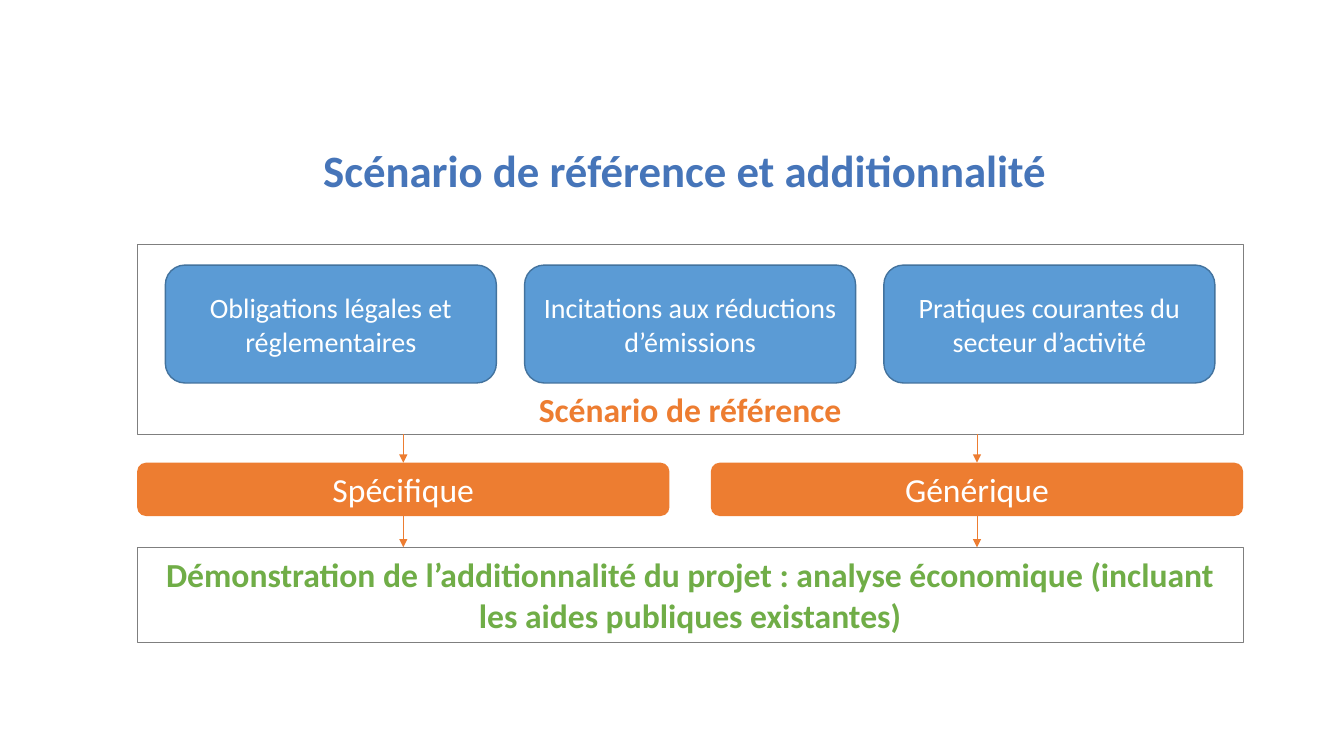
from lxml.etree import SubElement
from pptx import Presentation
from pptx.dml.color import RGBColor
from pptx.enum.shapes import MSO_CONNECTOR, MSO_SHAPE
from pptx.enum.text import MSO_ANCHOR, PP_ALIGN
from pptx.oxml.ns import qn
from pptx.util import Inches, Pt

TITLE_BLUE = RGBColor(0x46, 0x75, 0xB9)
BLUE = RGBColor(0x5B, 0x9B, 0xD5)
DARK_BLUE = RGBColor(0x43, 0x73, 0x9E)
ORANGE = RGBColor(0xED, 0x7D, 0x31)
GREEN = RGBColor(0x70, 0xAD, 0x47)
GREY = RGBColor(0x7F, 0x7F, 0x7F)
WHITE = RGBColor(0xFF, 0xFF, 0xFF)

LEFT, WIDTH = 1.36, 10.97
DRIVER_GAP, OPTION_GAP = 0.28, 0.41
ROWS = {
    "title": (1.43, 0.7),
    "baseline": (2.43, 1.88),
    "drivers": (2.63, 1.17),
    "options": (4.59, 0.53),
    "proof": (5.43, 0.94),
}

TITLE_FONT = {"size": Pt(32), "bold": True}
DRIVER_FONT = {"size": Pt(20), "bold": False}
OPTION_FONT = {"size": Pt(24), "bold": False}
FRAME_FONT = {"size": Pt(24), "bold": True}

DRIVERS = [
    "Obligations légales et réglementaires",
    "Incitations aux réductions d’émissions",
    "Pratiques courantes du secteur d’activité",
]
OPTIONS = ["Spécifique", "Générique"]


def columns(count, gap, margin=0):
    width = (WIDTH - 2 * margin - (count - 1) * gap) / count
    return [(LEFT + margin + i * (width + gap), width) for i in range(count)]


def write(sp, text, font, color, anchor):
    tf = sp.text_frame
    tf.word_wrap = True
    tf.vertical_anchor = anchor
    p = tf.paragraphs[0]
    p.alignment = PP_ALIGN.CENTER
    r = p.add_run()
    r.text = text
    for name, value in {"name": "Calibri", **font}.items():
        setattr(r.font, name, value)
    r.font.color.rgb = color
    return p


def add_title(slide, text):
    sp = slide.shapes.title
    top, height = ROWS["title"]
    place = {"left": LEFT - 0.05, "top": top, "width": WIDTH, "height": height}
    for name, value in place.items():
        setattr(sp, name, Inches(value))
    p = write(sp, text, TITLE_FONT, TITLE_BLUE, MSO_ANCHOR.TOP)
    p.line_spacing = 0.9


def add_box(slide, kind, column, row, text, font, color,
            fill=None, line=None, weight=0.75, anchor=MSO_ANCHOR.MIDDLE):
    (left, width), (top, height) = column, ROWS[row]
    sp = slide.shapes.add_shape(kind, *map(Inches, (left, top, width, height)))
    sp.shadow.inherit = False
    if fill is None:
        sp.fill.background()
    else:
        sp.fill.solid()
        sp.fill.fore_color.rgb = fill
    if line is None:
        sp.line.fill.background()
    else:
        sp.line.color.rgb = line
        sp.line.width = Pt(weight)
    write(sp, text, font, color, anchor)


def add_arrow(slide, x, top, bottom):
    cx = slide.shapes.add_connector(
        MSO_CONNECTOR.STRAIGHT, *map(Inches, (x, top, x, bottom)))
    cx.line.color.rgb = ORANGE
    cx.line.width = Pt(0.5)
    SubElement(cx.line._get_or_add_ln(), qn("a:tailEnd"), type="triangle")
    SubElement(cx._element.spPr, qn("a:effectLst"))


def main():
    prs = Presentation()
    prs.slide_width, prs.slide_height = Inches(13.33), Inches(7.5)
    slide = prs.slides.add_slide(prs.slide_layouts[5])
    full = (LEFT, WIDTH)

    add_title(slide, "Scénario de référence et additionnalité")
    for column, text in zip(columns(3, DRIVER_GAP, DRIVER_GAP), DRIVERS):
        add_box(slide, MSO_SHAPE.ROUNDED_RECTANGLE, column, "drivers", text,
                DRIVER_FONT, WHITE, fill=BLUE, line=DARK_BLUE, weight=1)
    add_box(slide, MSO_SHAPE.RECTANGLE, full, "baseline",
            "Scénario de référence", FRAME_FONT, ORANGE,
            line=GREY, anchor=MSO_ANCHOR.BOTTOM)
    add_box(slide, MSO_SHAPE.RECTANGLE, full, "proof",
            "Démonstration de l’additionnalité du projet : analyse économique "
            "(incluant les aides publiques existantes)",
            FRAME_FONT, GREEN, line=GREY)

    option_top, option_height = ROWS["options"]
    option_bottom = option_top + option_height
    for column, text in zip(columns(2, OPTION_GAP), OPTIONS):
        add_box(slide, MSO_SHAPE.ROUNDED_RECTANGLE, column, "options", text,
                OPTION_FONT, WHITE, fill=ORANGE)
        middle = column[0] + column[1] / 2
        add_arrow(slide, middle, sum(ROWS["baseline"]), option_top)
        add_arrow(slide, middle, option_bottom, ROWS["proof"][0])

    prs.save("out.pptx")


if __name__ == "__main__":
    main()
